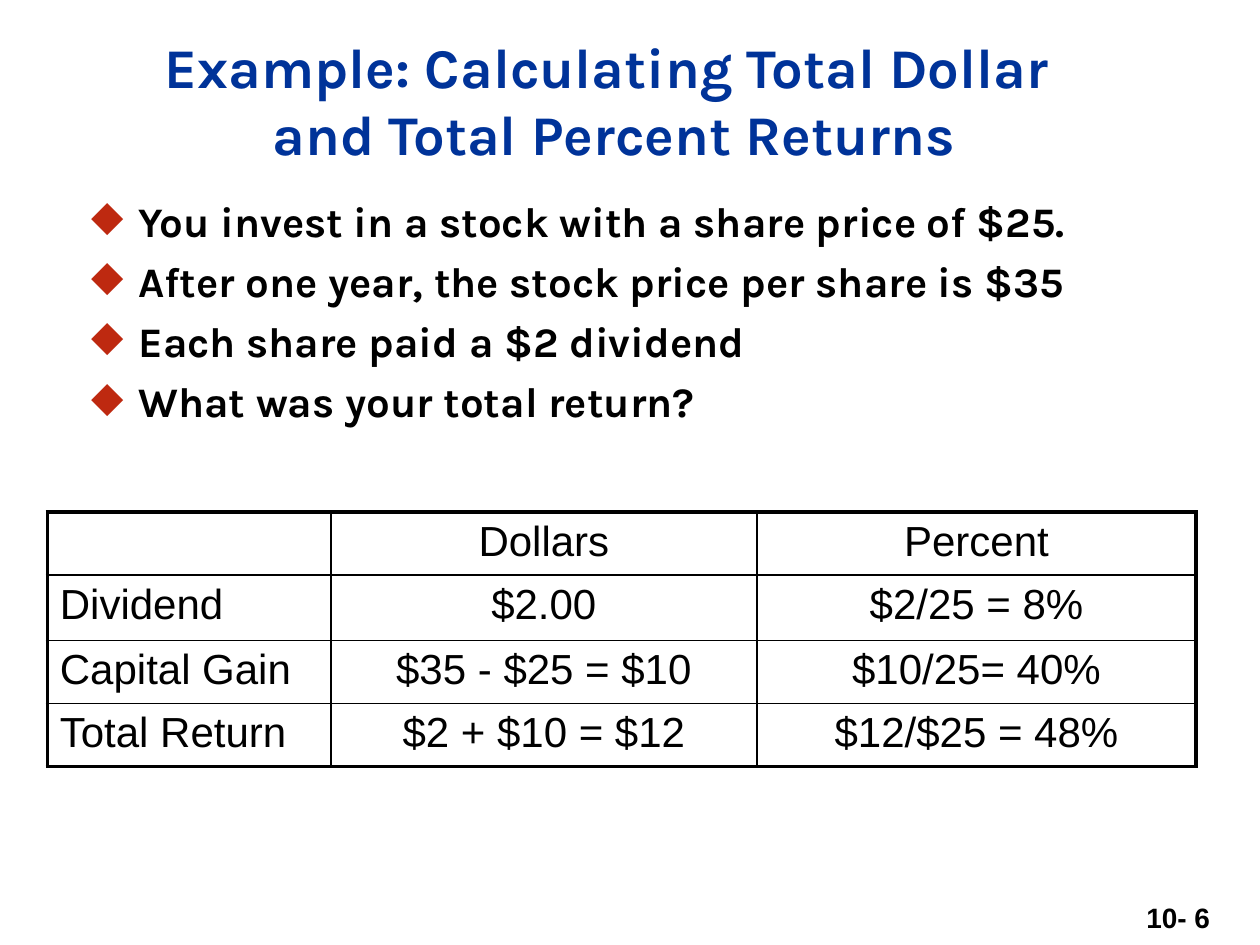
from lxml.etree import SubElement
from pptx import Presentation
from pptx.dml.color import RGBColor
from pptx.enum.text import MSO_ANCHOR, PP_ALIGN
from pptx.oxml import parse_xml
from pptx.oxml.ns import nsdecls, qn
from pptx.util import Pt

BLACK = RGBColor(0x00, 0x00, 0x00)
BLUE = RGBColor(0x00, 0x33, 0x99)
RED = RGBColor(0xBE, 0x29, 0x10)
WHITE = RGBColor(0xFF, 0xFF, 0xFF)

TITLE_LINES = ["Example: Calculating Total Dollar ", "and Total Percent Returns"]
FACTS = [
    "You invest in a stock with a share price of $25. ",
    "After one year, the stock price per share is $35 ",
    "Each share paid a $2 dividend",
    "What was your total return?",
]
RETURNS = [
    ["", "Dollars", "Percent"],
    ["Dividend", "$2.00", "$2/25 = 8%"],
    ["Capital Gain", "$35 - $25 = $10", "$10/25= 40%"],
    ["Total Return", "$2 + $10 = $12", "$12/$25 = 48%"],
]
COLUMN_WIDTHS = [162, 243.5, 251]
ROW_HEIGHTS = [36, 37.5, 36, 36]
OUTER_LINE, INNER_LINE = 2.25, 1


def add_run(paragraph, text, font_name, size, color, bold=True):
    """Append one formatted run."""
    run = paragraph.add_run()
    run.text = text
    run.font.name = font_name
    run.font.size = Pt(size)
    run.font.bold = bold
    run.font.color.rgb = color


def add_frame(slide, left, top, width, height, wrap=True):
    """Add a text box and return its text frame."""
    box = slide.shapes.add_textbox(Pt(left), Pt(top), Pt(width), Pt(height))
    box.text_frame.word_wrap = wrap
    return box.text_frame


def add_title(slide):
    """Add the centred two-line title."""
    frame = add_frame(slide, 36, 12, 630, 90)
    frame.vertical_anchor = MSO_ANCHOR.MIDDLE
    heading = frame.paragraphs[0]
    heading.alignment = PP_ALIGN.CENTER
    for index, line in enumerate(TITLE_LINES):
        if index:
            heading.add_line_break()
        add_run(heading, line, "Karla", 32, BLUE)


def set_bullet(paragraph):
    """Give a paragraph a hanging red diamond."""
    properties = paragraph._p.get_or_add_pPr()
    properties.set("marL", str(Pt(27)))
    properties.set("indent", str(-Pt(27)))
    bullet_color = SubElement(properties, qn("a:buClr"))
    SubElement(bullet_color, qn("a:srgbClr"), val=str(RED))
    SubElement(properties, qn("a:buChar"), char="◆")


def add_facts(slide):
    """Add the bulleted facts of the example."""
    frame = add_frame(slide, 45, 108, 654, 150.5)
    for index, text in enumerate(FACTS):
        fact = frame.add_paragraph() if index else frame.paragraphs[0]
        set_bullet(fact)
        fact.alignment = PP_ALIGN.JUSTIFY
        fact.space_before = Pt(5.6 if index else 0)
        add_run(fact, text, "Karla", 24, BLACK)


def set_borders(cell, widths):
    """Draw the left, right, top and bottom lines of a cell."""
    properties = cell._tc.get_or_add_tcPr()
    for position, (side, width) in enumerate(zip("LRTB", widths)):
        properties.insert(position, parse_xml(
            f'<a:ln{side} {nsdecls("a")} w="{Pt(width)}"><a:solidFill>'
            f'<a:srgbClr val="{BLACK}"/></a:solidFill></a:ln{side}>'))


def add_returns_table(slide):
    """Add the table of dollar and percent returns."""
    table = slide.shapes.add_table(
        len(ROW_HEIGHTS), len(COLUMN_WIDTHS), Pt(27), Pt(292.5),
        Pt(sum(COLUMN_WIDTHS)), Pt(sum(ROW_HEIGHTS))).table
    for column, width in zip(table.columns, COLUMN_WIDTHS):
        column.width = Pt(width)
    for row, height in zip(table.rows, ROW_HEIGHTS):
        row.height = Pt(height)
    last_row, last_column = len(ROW_HEIGHTS) - 1, len(COLUMN_WIDTHS) - 1
    for r, values in enumerate(RETURNS):
        for c, value in enumerate(values):
            cell = table.cell(r, c)
            cell.fill.solid()
            cell.fill.fore_color.rgb = WHITE
            on_edge = (c == 0, c == last_column, r == 0, r == last_row)
            set_borders(cell, [OUTER_LINE if edge else INNER_LINE for edge in on_edge])
            entry = cell.text_frame.paragraphs[0]
            entry.alignment = PP_ALIGN.CENTER if c else PP_ALIGN.LEFT
            if value:
                add_run(entry, value, "Arial", 24, BLACK, bold=False)


def add_page_number(slide):
    """Add the page number at the lower right."""
    frame = add_frame(slide, 648, 511, 62, 26.5, wrap=False)
    add_run(frame.paragraphs[0], "10- 6", "Arial", 16, BLACK)


def main():
    """Build the slide and save it."""
    presentation = Presentation()
    presentation.slide_width, presentation.slide_height = Pt(720), Pt(540)
    slide = presentation.slides.add_slide(presentation.slide_layouts[6])
    add_page_number(slide)
    add_title(slide)
    add_facts(slide)
    add_returns_table(slide)
    presentation.save("out.pptx")


if __name__ == "__main__":
    main()
